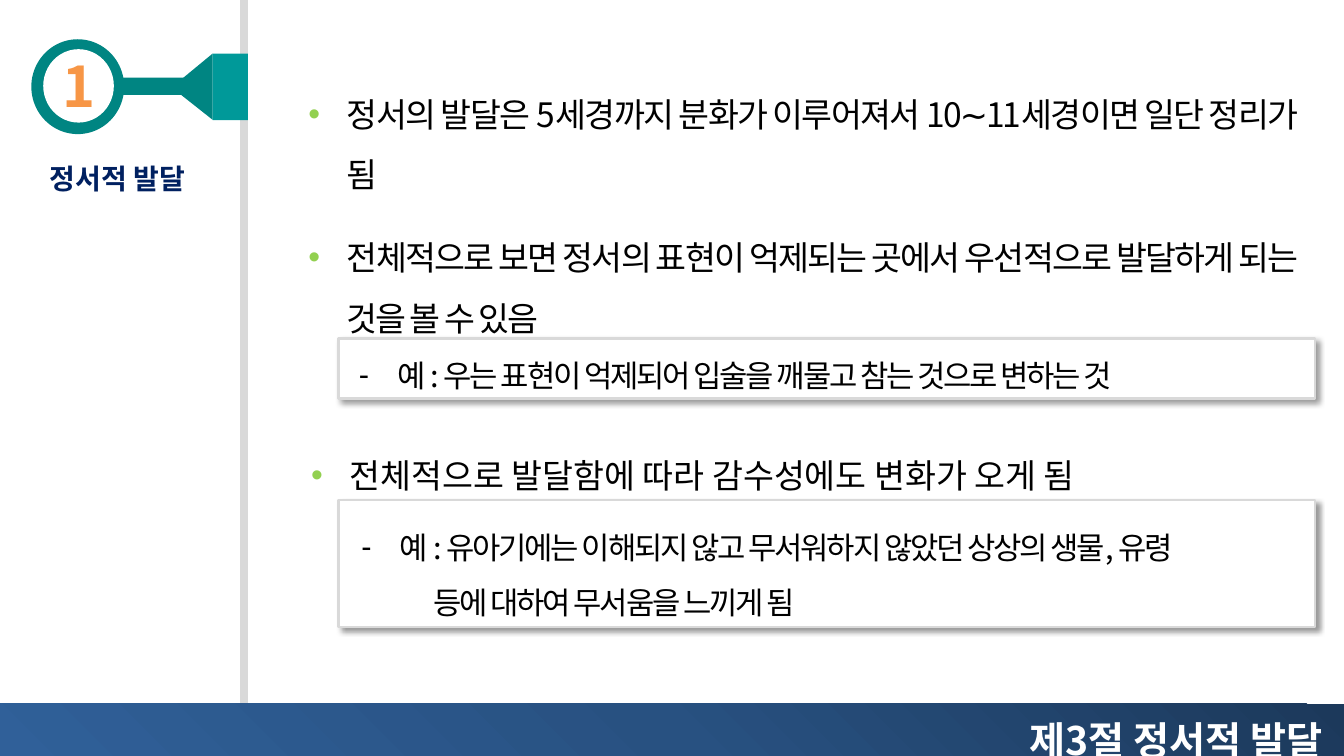
from copy import deepcopy
from dataclasses import dataclass

from lxml.etree import SubElement
from pptx import Presentation
from pptx.dml.color import RGBColor
from pptx.enum.shapes import MSO_SHAPE
from pptx.enum.text import MSO_ANCHOR, MSO_AUTO_SIZE, PP_ALIGN
from pptx.oxml.ns import qn
from pptx.util import Cm, Pt


@dataclass(frozen=True)
class Theme:
    face: str = "Noto Sans CJK KR"
    white: str = "FFFFFF"
    black: str = "000000"
    grey: str = "D9D9D9"
    teal: str = "008582"
    aqua: str = "009999"
    navy: str = "002060"
    orange: str = "F79646"
    green: str = "92D050"
    fade: tuple = ("1C395B", "285181", "306099")
    digit: int = 40
    title: int = 28
    text: int = 24
    sample: int = 22
    label: int = 20


THEME = Theme()


def paint(fill, color):
    fill.solid()
    fill.fore_color.rgb = RGBColor.from_string(color)


def draw(slide, kind, color, *area):
    shape = slide.shapes.add_shape(kind, *map(Cm, area))
    shape.shadow.inherit = False
    paint(shape.fill, color)
    shape.line.fill.background()
    return shape


def add_cone(slide, color, points):
    start, *rest = [(Cm(x), Cm(y)) for x, y in points]
    pen = slide.shapes.build_freeform(*start, scale=1.0)
    pen.add_line_segments(rest, close=True)
    cone = pen.convert_to_shape()
    cone.shadow.inherit = False
    paint(cone.fill, color)
    cone.line.fill.background()


def add_band(slide, colors, *area):
    """Draw a bar that fades evenly through three colors."""
    band = draw(slide, MSO_SHAPE.RECTANGLE, colors[0], *area)
    band.fill.gradient()
    band.fill.gradient_angle = 225
    stops = band.element.spPr.find(".//" + qn("a:gsLst"))
    stops.append(deepcopy(stops[0]))
    for i, (stop, color) in enumerate(zip(band.fill.gradient_stops, colors)):
        stop.color.rgb = RGBColor.from_string(color)
        stop.position = i / 2


def add_card(slide, *area):
    """Draw a white box with a grey edge and a soft shadow."""
    card = draw(slide, MSO_SHAPE.RECTANGLE, THEME.white, *area)
    paint(card.line.fill, THEME.grey)
    card.line.width = Pt(2)
    effects = card.element.spPr.find(qn("a:effectLst"))
    shade = SubElement(effects, qn("a:outerShdw"), blurRad=str(Pt(4)),
                       dist=str(Pt(3)), dir="2700000", algn="tl", rotWithShape="0")
    tint = SubElement(shade, qn("a:srgbClr"), val=THEME.black)
    SubElement(tint, qn("a:alpha"), val="40000")


def set_up(shape, *area, wrap=True):
    """Place a text shape and return its frame."""
    shape.left, shape.top, shape.width, shape.height = map(Cm, area)
    frame = shape.text_frame
    frame.auto_size = MSO_AUTO_SIZE.NONE
    frame.word_wrap = wrap
    frame.vertical_anchor = MSO_ANCHOR.TOP
    return frame


def add_box(slide, *area, wrap=True):
    return set_up(slide.shapes.add_textbox(0, 0, 0, 0), *area, wrap=wrap)


def take(slide, holder, *area):
    """Bring a placeholder to the front and place it."""
    slide.shapes.element.append(holder.element)
    return set_up(holder, *area)


def add_para(frame, align=PP_ALIGN.LEFT, lines=1.0, before=0, level=0):
    first = frame.paragraphs[0]
    para = frame.add_paragraph() if first.runs else first
    para.alignment = align
    para.line_spacing = lines
    para.space_before = Pt(before)
    para.level = level
    return para


def indent(para, left, hang=0.0):
    props = para._p.get_or_add_pPr()
    props.set("marL", str(Cm(left)))
    props.set("indent", str(Cm(-hang)))
    return props


def add_mark(para, mark, color, left=0.97):
    props = indent(para, left, 0.97)
    tint = SubElement(props, qn("a:buClr"))
    SubElement(tint, qn("a:srgbClr"), val=color)
    SubElement(props, qn("a:buFont"), typeface="Arial")
    SubElement(props, qn("a:buChar"), char=mark)


def add_run(para, text, size, color, bold=False, tight=False):
    run = para.add_run()
    run.text = text
    font = run.font
    font.size, font.bold, font.name = Pt(size), bold, THEME.face
    font.color.rgb = RGBColor.from_string(color)
    props = run._r.get_or_add_rPr()
    props.find(qn("a:latin")).addnext(props.makeelement(qn("a:ea"), typeface=THEME.face))
    if tight:
        props.set("spc", "-150")


def add_key(slide):
    """Draw the numbered key on the left rail."""
    draw(slide, MSO_SHAPE.RECTANGLE, THEME.grey, 6.05, 0, 0.2, 17.93)
    draw(slide, MSO_SHAPE.OVAL, THEME.teal, 0.79, 0.99, 2.34, 2.39)
    draw(slide, MSO_SHAPE.OVAL, THEME.white, 1.09, 1.24, 1.78, 1.85)
    add_cone(slide, THEME.teal, [(4.5, 2.06), (5.36, 1.35), (5.36, 3.02), (4.5, 2.34)])
    draw(slide, MSO_SHAPE.RECTANGLE, THEME.aqua, 5.36, 1.35, 0.89, 1.68)
    draw(slide, MSO_SHAPE.RECTANGLE, THEME.teal, 2.97, 1.96, 1.96, 0.43)
    para = add_para(add_box(slide, 1.32, 1.17, 1.35, 1.96, wrap=False), PP_ALIGN.CENTER)
    add_run(para, "1", THEME.digit, THEME.orange, bold=True)


def fill_body(frame):
    points = ["정서의 발달은 5세경까지 분화가 이루어져서 10∼11세경이면 일단 정리가 됨",
              "전체적으로 보면 정서의 표현이 억제되는 곳에서 우선적으로 발달하게 되는 것을 볼 수 있음"]
    for i, point in enumerate(points):
        para = add_para(frame, PP_ALIGN.JUSTIFY, 1.5, before=16 * i)
        add_mark(para, "•", THEME.green)
        add_run(para, point, THEME.text, THEME.black, tight=True)
    para = add_para(frame, PP_ALIGN.JUSTIFY, 1.5, level=1)
    add_mark(para, "-", THEME.black, left=2.24)
    add_run(para, "예 : 우는 표현이 억제되어 입술을 깨물고 참는 것으로 변하는 것",
            THEME.sample, THEME.black, tight=True)


def fill_sample(frame):
    para = add_para(frame, PP_ALIGN.JUSTIFY, 1.5)
    add_mark(para, "-", THEME.black)
    add_run(para, "예 : 유아기에는 이해되지 않고 무서워하지 않았던 상상의 생물, 유령",
            THEME.sample, THEME.black, tight=True)
    para = add_para(frame, lines=1.5)
    indent(para, 1.81)
    add_run(para, "등에 대하여 무서움을 느끼게 됨", THEME.sample, THEME.black, tight=True)


def main():
    deck = Presentation()
    deck.slide_width, deck.slide_height = Cm(33.87), Cm(19.05)
    slide = deck.slides.add_slide(deck.slide_layouts[1])
    title, body = slide.placeholders

    add_key(slide)
    add_band(slide, THEME.fade, 0, 17.73, 33.87, 1.4)
    for top, height in ((12.6, 3.2), (8.53, 1.52)):
        add_card(slide, 8.53, top, 24.61, height)

    frame = take(slide, title, 16.33, 17.32, 17.53, 1.83)
    frame.margin_right = Cm(0.54)
    para = add_para(frame, PP_ALIGN.RIGHT, 1.5)
    add_run(para, "제3절 정서적 발달", THEME.title, THEME.white, bold=True)

    para = add_para(add_box(slide, 0, 3.94, 5.92, 1.12), PP_ALIGN.CENTER)
    add_run(para, "정서적 발달", THEME.label, THEME.navy, bold=True)

    fill_body(take(slide, body, 7.52, 1.73, 25.4, 8.41))

    para = add_para(add_box(slide, 7.59, 11.33, 22.1, 1.27))
    add_mark(para, "•", THEME.green)
    add_run(para, "전체적으로 발달함에 따라 감수성에도 변화가 오게 됨", THEME.text, THEME.black)

    fill_sample(add_box(slide, 8.86, 12.73, 24.26, 3.07))
    deck.save("out.pptx")


if __name__ == "__main__":
    main()
